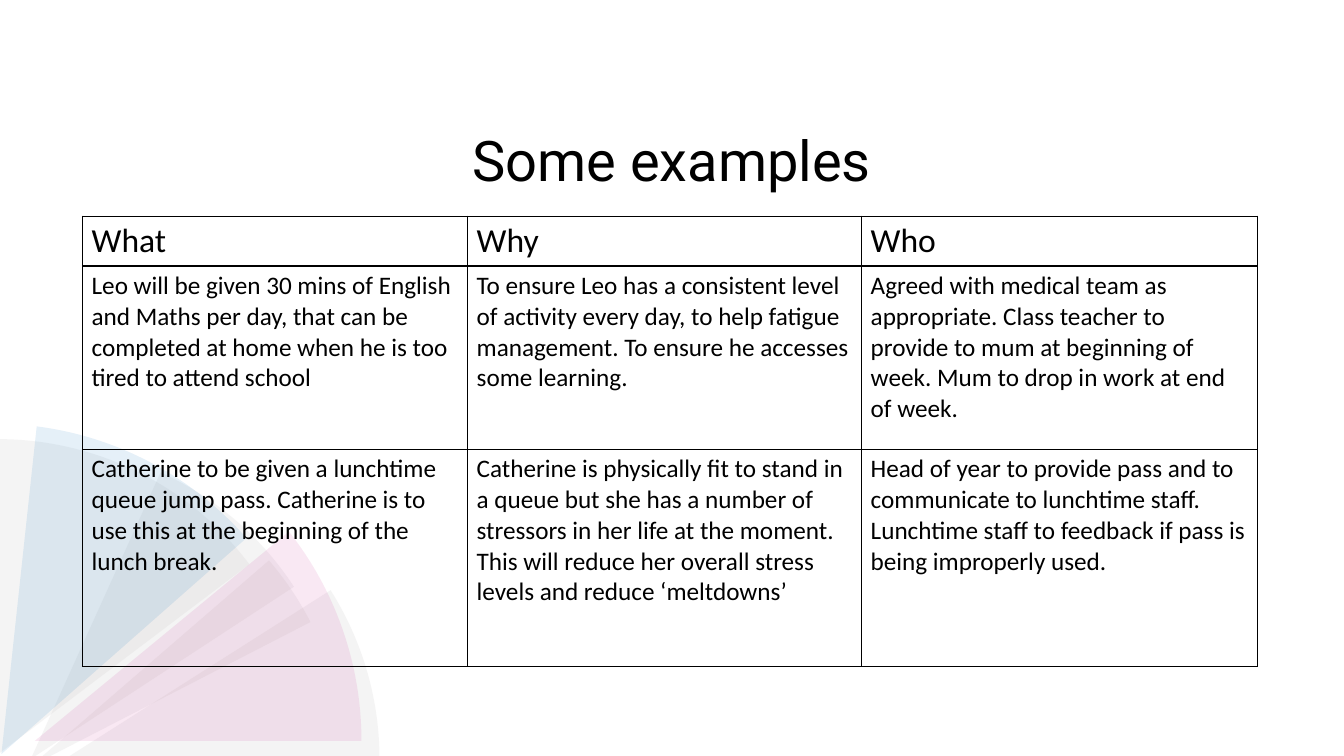
import pptx
import pptx.util
import pptx.dml.color
import pptx.enum.shapes
import pptx.enum.text
import pptx.oxml
import pptx.oxml.ns
from lxml import etree

Pt = pptx.util.Pt

# Content
TITLE = "Some examples"
ROWS = [
    ("What", "Why", "Who"),
    (
        "Leo will be given 30 mins of English and Maths per day, that can be "
        "completed at home when he is too tired to attend school",
        "To ensure Leo has a consistent level of activity every day, to help "
        "fatigue management. To ensure he accesses some learning.",
        "Agreed with medical team as appropriate. Class teacher to provide to "
        "mum at beginning of week. Mum to drop in work at end of week.",
    ),
    (
        "Catherine to be given a lunchtime queue jump pass. Catherine is to "
        "use this at the beginning of the lunch break.",
        "Catherine is physically fit to stand in a queue but she has a number "
        "of stressors in her life at the moment. This will reduce her overall "
        "stress levels and reduce ‘meltdowns’",
        "Head of year to provide pass and to communicate to lunchtime staff. "
        "Lunchtime staff to feedback if pass is being improperly used.",
    ),
]

THEME = {
    "text": "000000", "grey": "D0CECE", "blue": "0070C0", "pink": "CC3399",
    "title_font": "Roboto", "body_font": "Calibri",
    "title_size": 40, "header_size": 24, "body_size": 18, "border": 1,
}

# Layout in points
SLIDE_SIZE = (960, 540)
TITLE_BOX = (92.9, 64.8, 774, 104.4)
TABLE_ORIGIN = (59, 154.4)
COLUMN_WIDTHS = (275, 281.5, 282.8)
ROW_HEIGHTS = (35, 131, 155)
CELL_MARGINS = (6.5, 3.2)
GREY_SIZE = (450, 449.3)
COLOUR_SIZE = (475.9, 466.6)
# Fan blades: left, top, size, rotation, start and end angle, colour, opacity %
BLADES = [
    (-178.6, 317.5, GREY_SIZE, 90, 237.56, 270, "grey", 22),
    (-226.1, 313.9, GREY_SIZE, 52.9, 216.93, 270, "grey", 22),
    (-203, 317.5, GREY_SIZE, 56.8, 237.56, 270, "grey", 22),
    (-203, 322.6, GREY_SIZE, 81.6, 237.56, 251.13, "grey", 22),
    (-236.9, 305.3, COLOUR_SIZE, 48.6, 227.54, 270, "blue", 10),
    (-213.1, 295.9, COLOUR_SIZE, 90, 230.53, 270, "pink", 11),
]


def rgb(name):
    return pptx.dml.color.RGBColor.from_string(THEME[name])


def write_text(frame, text, size, font, align="LEFT", spacing=1.0):
    para = frame.paragraphs[0]
    para.alignment = getattr(pptx.enum.text.PP_ALIGN, align)
    para.line_spacing = spacing
    span = para.add_run()
    span.text = text
    span.font.size = Pt(THEME[size])
    span.font.name = THEME[font]
    span.font.bold = False
    span.font.color.rgb = rgb("text")


def add_blade(slide, left, top, size, rotation, start, end, colour, opacity):
    blade = slide.shapes.add_shape(
        pptx.enum.shapes.MSO_SHAPE.PIE, Pt(left), Pt(top), *map(Pt, size))
    blade.rotation = rotation
    # Angles are stored in 60000ths of a degree, adjustments in 100000ths
    blade.adjustments[0] = start * 0.6
    blade.adjustments[1] = end * 0.6
    blade.shadow.inherit = False
    blade.line.fill.background()
    blade.fill.solid()
    blade.fill.fore_color.rgb = rgb(colour)
    qn = pptx.oxml.ns.qn
    colour_node = blade.fill._xPr.find(qn("a:solidFill")).find(qn("a:srgbClr"))
    etree.SubElement(colour_node, qn("a:alpha"), val=str(opacity * 1000))


def add_borders(cell):
    properties = cell._tc.get_or_add_tcPr()
    for side in "LRTB":
        properties.append(pptx.oxml.parse_xml(
            f'<a:ln{side} {pptx.oxml.ns.nsdecls("a")} w="{Pt(THEME["border"])}">'
            f'<a:solidFill><a:srgbClr val="{THEME["text"]}"/></a:solidFill>'
            f'</a:ln{side}>'))


def add_examples_table(slide):
    table = slide.shapes.add_table(
        len(ROWS), len(COLUMN_WIDTHS), *map(Pt, TABLE_ORIGIN),
        Pt(sum(COLUMN_WIDTHS)), Pt(sum(ROW_HEIGHTS))).table
    table.first_row = False
    table.horz_banding = False
    for column, width in zip(table.columns, COLUMN_WIDTHS):
        column.width = Pt(width)
    for row, height in zip(table.rows, ROW_HEIGHTS):
        row.height = Pt(height)
    for row_index, texts in enumerate(ROWS):
        size = "body_size" if row_index else "header_size"
        for column_index, text in enumerate(texts):
            cell = table.cell(row_index, column_index)
            cell.margin_left = cell.margin_right = Pt(CELL_MARGINS[0])
            cell.margin_top = cell.margin_bottom = Pt(CELL_MARGINS[1])
            add_borders(cell)
            cell.fill.background()
            write_text(cell.text_frame, text, size, "body_font")


def main():
    deck = pptx.Presentation()
    deck.slide_width, deck.slide_height = map(Pt, SLIDE_SIZE)
    slide = deck.slides.add_slide(deck.slide_layouts[5])

    # Background fan
    for blade in BLADES:
        add_blade(slide, *blade)

    # Title
    title = slide.shapes.title
    title.left, title.top, title.width, title.height = map(Pt, TITLE_BOX)
    title.text_frame.vertical_anchor = pptx.enum.text.MSO_ANCHOR.MIDDLE
    write_text(title.text_frame, TITLE, "title_size", "title_font",
               align="CENTER", spacing=0.9)

    # Table
    add_examples_table(slide)
    deck.save("out.pptx")


if __name__ == "__main__":
    main()
